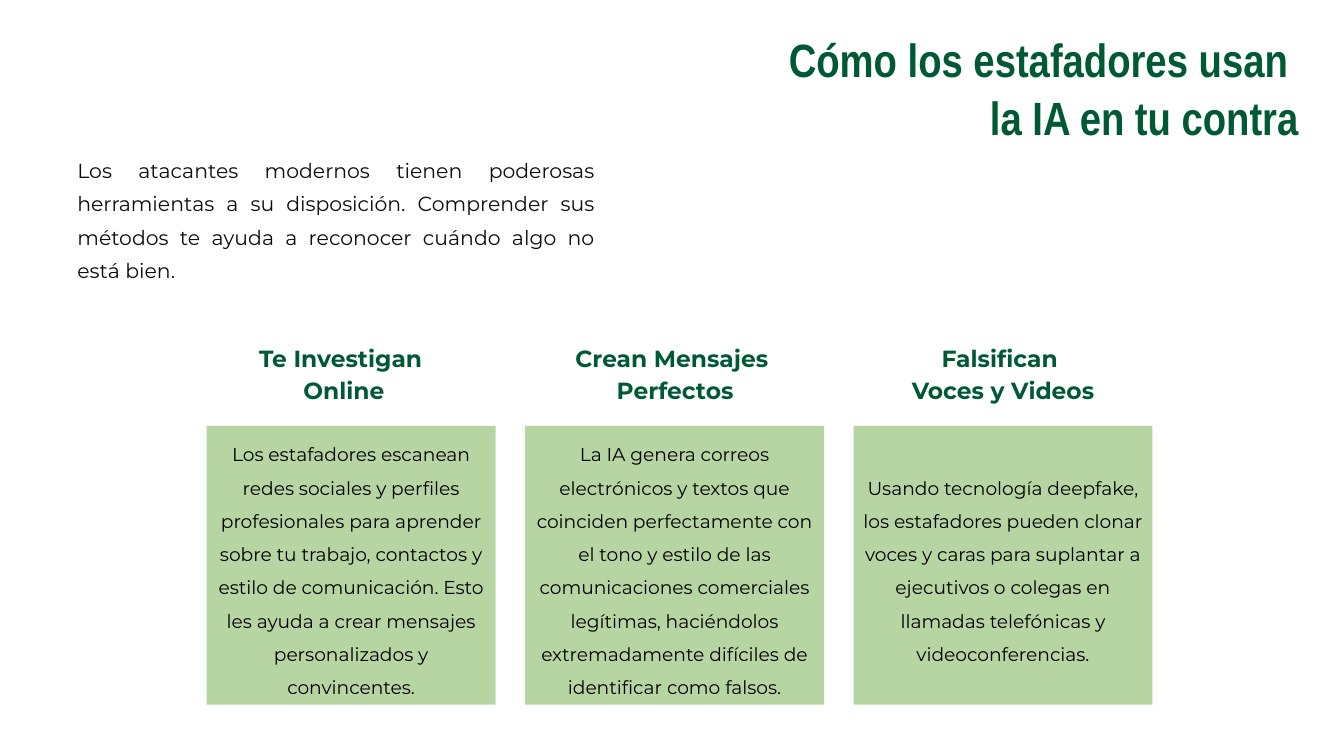
"""Build the slide on how scammers use AI, with three headed cards."""
import pptx
import pptx.dml.color
import pptx.enum.shapes
import pptx.enum.text
import pptx.oxml
import pptx.oxml.ns
import pptx.util

Cm = pptx.util.Cm
Pt = pptx.util.Pt
ALIGN = pptx.enum.text.PP_ALIGN
GREEN = "005935"


def color(value):
    """Turn a hex string into a colour."""
    return pptx.dml.color.RGBColor.from_string(value)


def write(shape, text, *, size, line, fill, align=ALIGN.CENTER, font="Montserrat",
          bold=False, wrap=True, margin=0, anchor=pptx.enum.text.MSO_ANCHOR.TOP):
    """Fill a shape with text, one paragraph per line."""
    frame = shape.text_frame
    frame.word_wrap = wrap
    frame.vertical_anchor = anchor
    frame.margin_left = frame.margin_right = Cm(margin)
    frame.margin_top = frame.margin_bottom = Cm(margin / 2)
    frame.text = text
    for paragraph in frame.paragraphs:
        paragraph.alignment = align
        paragraph.line_spacing = Pt(line)
        run_font = paragraph.runs[0].font
        run_font.name = font
        run_font.size = Pt(size)
        run_font.bold = bold
        run_font.color.rgb = color(fill)


deck = pptx.Presentation()
deck.slide_width = Cm(40.64)
deck.slide_height = Cm(22.86)
slide = deck.slides.add_slide(deck.slide_layouts[6])

title = slide.shapes.add_textbox(Cm(-0.56), Cm(0.89), Cm(39.83), Cm(1.98))
write(title, "Cómo los estafadores usan \nla IA en tu contra", size=40, line=49.5,
      fill=GREEN, align=ALIGN.RIGHT, font="Arial Narrow", bold=True)

intro = slide.shapes.add_textbox(Cm(2.34), Cm(4.52), Cm(15.65), Cm(3.33))
write(intro, "Los atacantes modernos tienen poderosas herramientas a su disposición. "
      "Comprender sus métodos te ayuda a reconocer cuándo algo no está bien.",
      size=17.5, line=28.5, fill="0D0D0D", align=ALIGN.JUSTIFY)

tactics = [
    ("Te Investigan \nOnline", 6.3, 8.2, 8.74,
     "Los estafadores escanean redes sociales y perfiles profesionales para aprender "
     "sobre tu trabajo, contactos y estilo de comunicación. Esto les ayuda a crear "
     "mensajes personalizados y convincentes."),
    ("Crean Mensajes \nPerfectos", 15.27, 10.29, 9.04,
     "La IA genera correos electrónicos y textos que coinciden perfectamente con el "
     "tono y estilo de las comunicaciones comerciales legítimas, haciéndolos "
     "extremadamente difíciles de identificar como falsos."),
    ("Falsifican \nVoces y Videos", 25.4, 9.86, 9.04,
     "Usando tecnología deepfake, los estafadores pueden clonar voces y caras para "
     "suplantar a ejecutivos o colegas en llamadas telefónicas y videoconferencias."),
]
card_left = 6.25
card_gap = 0.89

for tactic, heading_left, heading_width, card_width, explanation in tactics:
    heading = slide.shapes.add_textbox(
        Cm(heading_left), Cm(10.29), Cm(heading_width), Cm(0.99))
    write(heading, tactic, size=20, line=27.5, fill=GREEN, bold=True, wrap=False)

    card = slide.shapes.add_shape(
        pptx.enum.shapes.MSO_SHAPE.RECTANGLE,
        Cm(card_left), Cm(12.88), Cm(card_width), Cm(8.43))
    card.shadow.inherit = False
    card.line.fill.background()
    card.fill.solid()
    card.fill.fore_color.rgb = color("70AD47")
    tint = card.fill._xPr.find(".//" + pptx.oxml.ns.qn("a:srgbClr"))
    tint.append(pptx.oxml.parse_xml(
        f'<a:alpha {pptx.oxml.ns.nsdecls("a")} val="50000"/>'))
    write(card, explanation, size=16, line=28.5, fill="000000", margin=0.25,
          anchor=pptx.enum.text.MSO_ANCHOR.MIDDLE)
    card_left += card_width + card_gap

deck.save("out.pptx")
